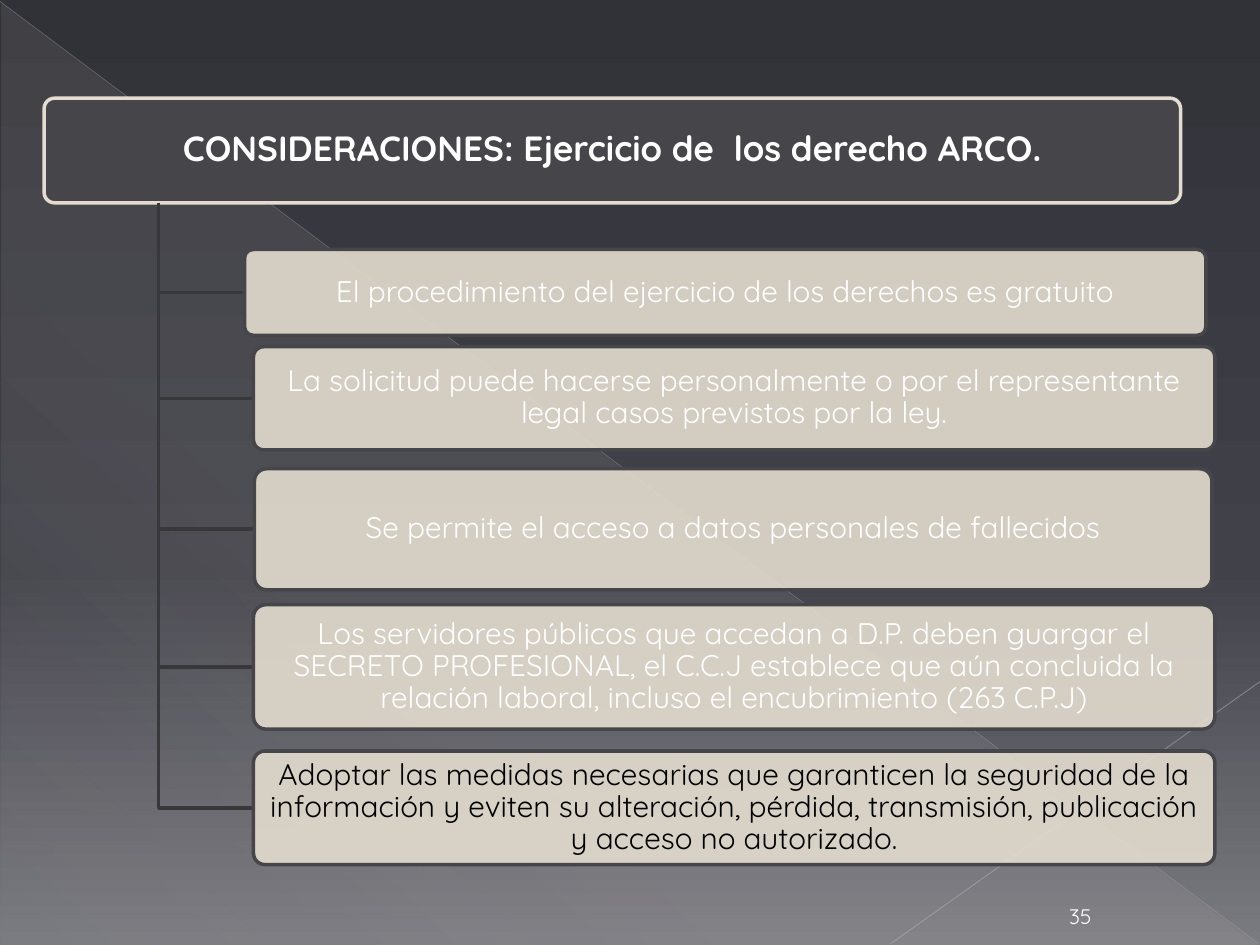
import lxml.etree
import pptx
import pptx.util
import pptx.dml.color
import pptx.enum.shapes
import pptx.enum.text
import pptx.oxml.ns

Cm, Pt = pptx.util.Cm, pptx.util.Pt
RGB = pptx.dml.color.RGBColor.from_string
qn = pptx.oxml.ns.qn
SHAPE = pptx.enum.shapes.MSO_SHAPE
ANCHOR = pptx.enum.text.MSO_ANCHOR
CENTER = pptx.enum.text.PP_ALIGN.CENTER

THEME = {
    "font": "Quicksand",
    "title": 20, "body": 17, "number": 12,
    "white": "FFFFFF", "black": "000000",
    "beige": "E3DCCF", "gray": "46464A", "branch": "38383B",
    "sky": [(0, "313138", 100), (60, "41414A", 100), (100, "7A7A81", 100)],
    "glow": [(0, "E3DCCF", 10), (70, "E3DCCF", 8), (100, "E3DCCF", 1)],
}


def set_gradient(fill, element, stops, angle):
    fill.gradient()
    grad = element.find(".//" + qn("a:gradFill"))
    gs_lst = grad.find(qn("a:gsLst"))
    for gs in list(gs_lst):
        gs_lst.remove(gs)
    for pos, color, alpha in stops:
        gs = lxml.etree.SubElement(gs_lst, qn("a:gs"), pos=str(pos * 1000))
        clr = lxml.etree.SubElement(gs, qn("a:srgbClr"), val=color)
        lxml.etree.SubElement(clr, qn("a:alpha"), val=str(alpha * 1000))
    grad.find(qn("a:lin")).set("ang", str(angle * 60000))


def write_text(sp, text, size, color, bold=False, **frame):
    tf = sp.text_frame
    for name, value in {"word_wrap": True, **frame}.items():
        setattr(tf, name, value)
    p = tf.paragraphs[0]
    p.alignment = CENTER
    r = p.add_run()
    r.text = text
    font = {"name": THEME["font"], "size": Pt(THEME[size]), "bold": bold}
    for name, value in font.items():
        setattr(r.font, name, value)
    r.font.color.rgb = RGB(THEME[color])
    return p


prs = pptx.Presentation()
prs.slide_width, prs.slide_height = Cm(25.4), Cm(19.05)
s = prs.slides.add_slide(prs.slide_layouts[6])

# Background: gradient, pale triangle and two thin diagonals
set_gradient(s.background.fill, s._element, THEME["sky"], 90)

sp = s.shapes.add_shape(SHAPE.RIGHT_TRIANGLE, Cm(0.03), Cm(0.05), Cm(25.35), Cm(19))
sp.shadow.inherit = False
sp.line.fill.background()
set_gradient(sp.fill, sp._element, THEME["glow"], 133)

diagonals = [
    ((0, 0.03, 25.37, 19.02), "B9B9BA", 0.39, 35),
    ((25.4, 13.74, 17.96, 19.02), "C1C1C2", 0.47, 45),
]
for ends, color, width, alpha in diagonals:
    cx = s.shapes.add_connector(pptx.enum.shapes.MSO_CONNECTOR.STRAIGHT, *map(Cm, ends))
    cx.line.color.rgb = RGB(color)
    cx.line.width = Pt(width)
    clr = cx._element.find(".//" + qn("a:srgbClr"))
    lxml.etree.SubElement(clr, qn("a:alpha"), val=str(alpha * 1000))
    lxml.etree.SubElement(cx._element.spPr, qn("a:effectLst"))

# Boxes: the heading, then its five considerations
STEM_X, STEM_Y = 3.2, 4.09
boxes = [
    ((0.89, 1.98, 22.91, 2.11), "CONSIDERACIONES: Ejercicio de  los derecho ARCO.", "white"),
    ((4.93, 5.03, 19.38, 1.73),
     "El procedimiento del ejercicio de los derechos es gratuito", "white"),
    ((5.11, 6.99, 19.38, 2.08),
     "La solicitud puede hacerse personalmente o por el representante legal "
     "casos previstos por la ley.", "white"),
    ((5.13, 9.45, 19.3, 2.44),
     "Se permite el acceso a datos personales de fallecidos", "white"),
    ((5.11, 12.19, 19.38, 2.51),
     "Los servidores públicos que accedan a D.P. deben guargar el SECRETO "
     "PROFESIONAL, el C.C.J establece que aún concluida la relación laboral, "
     "incluso el encubrimiento (263 C.P.J)", "white"),
    ((5.11, 15.14, 19.38, 2.29),
     "Adoptar las medidas necesarias que garanticen la seguridad de la "
     "información y eviten su alteración, pérdida, transmisión, publicación "
     "y acceso no autorizado.", "black"),
]
for i, (box, text, color) in enumerate(boxes):
    heading = i == 0
    left, top, width, height = box

    # Elbow branch from the heading to the middle of the left side
    if not heading:
        middle = top + height / 2
        ff = s.shapes.build_freeform(Cm(STEM_X), Cm(STEM_Y))
        ff.add_line_segments(
            [(Cm(STEM_X), Cm(middle)), (Cm(left), Cm(middle))], close=False)
        sp = ff.convert_to_shape()
        sp.shadow.inherit = False
        sp.fill.background()
        sp.line.color.rgb = RGB(THEME["branch"])
        sp.line.width = Pt(2)

    sp = s.shapes.add_shape(SHAPE.ROUNDED_RECTANGLE, *map(Cm, box))
    sp.adjustments[0] = 0.1
    sp.shadow.inherit = False
    sp.fill.solid()
    sp.fill.fore_color.rgb = RGB(THEME["gray" if heading else "beige"])
    if not heading:
        clr = sp._element.spPr.find(qn("a:solidFill")).find(qn("a:srgbClr"))
        lxml.etree.SubElement(clr, qn("a:alpha"), val="90000")
    sp.line.color.rgb = RGB(THEME["beige" if heading else "gray"])
    sp.line.width = Pt(2)
    p = write_text(sp, text, "title" if heading else "body", color, bold=heading,
                   vertical_anchor=ANCHOR.MIDDLE,
                   margin_left=Cm(0.1), margin_right=Cm(0.1),
                   margin_top=Cm(0.06), margin_bottom=Cm(0.06))
    p.line_spacing = 0.9

# Slide number
sp = s.shapes.add_textbox(Cm(21.08), Cm(18.01), Cm(1.4), Cm(0.84))
write_text(sp, "35", "number", "white", vertical_anchor=ANCHOR.BOTTOM)

prs.save("out.pptx")
